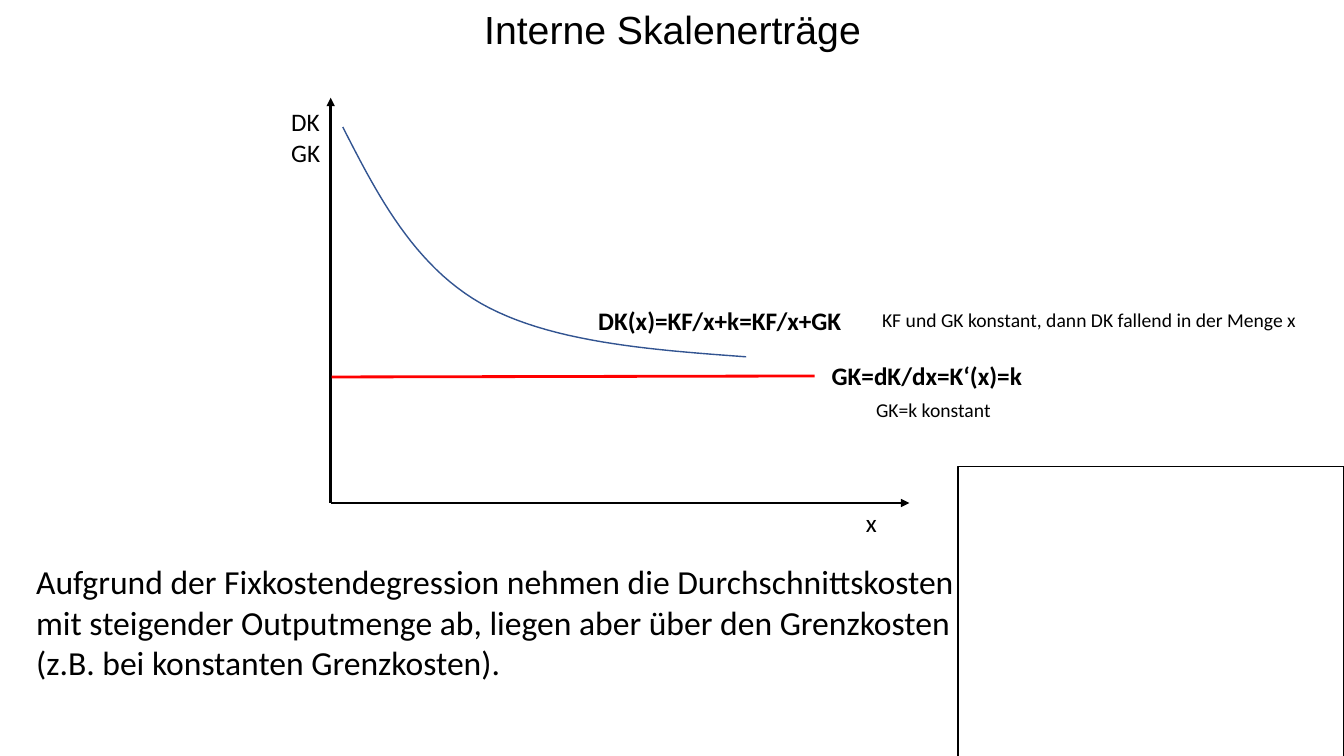
from dataclasses import dataclass

from lxml import etree
from pptx import Presentation
from pptx import util as u
from pptx.dml.color import RGBColor
from pptx.enum import shapes, text
from pptx.oxml import ns


@dataclass(frozen=True)
class Theme:
    ink: str = "000000"
    marginal: str = "FF0000"
    average: str = "325491"
    heading_font: str = "Arial"
    body_font: str = "Calibri"
    title: int = 28
    body: int = 24
    label: int = 18
    note: int = 14


class SlideBuilder:
    def __init__(self, slide, theme):
        self.slide = slide
        self.theme = theme

    def text(self, box, lines, size, font=None, bold=False, wrap=True,
             align=text.PP_ALIGN.LEFT, anchor=text.MSO_ANCHOR.TOP, spacing=1.0):
        frame = self.slide.shapes.add_textbox(*map(u.Inches, box)).text_frame
        frame.word_wrap = wrap
        frame.vertical_anchor = anchor
        for index, line in enumerate(lines):
            paragraph = frame.add_paragraph() if index else frame.paragraphs[0]
            paragraph.alignment = align
            paragraph.line_spacing = spacing
            run = paragraph.add_run()
            run.text = line
            run.font.name = font or self.theme.body_font
            run.font.size = u.Pt(size)
            run.font.bold = bold
            run.font.color.rgb = RGBColor.from_string(self.theme.ink)

    def stroke(self, line, color, width):
        line.color.rgb = RGBColor.from_string(color)
        line.width = u.Pt(width)

    def line(self, start, end, color, arrow=False):
        connector = self.slide.shapes.add_connector(
            shapes.MSO_CONNECTOR.STRAIGHT, *map(u.Inches, (*start, *end)))
        self.stroke(connector.line, color, 2)
        if arrow:
            etree.SubElement(connector.line._get_or_add_ln(),
                             ns.qn("a:tailEnd"), type="triangle")
        etree.SubElement(connector._element.spPr, ns.qn("a:effectLst"))

    def outline(self, shape, color):
        shape.shadow.inherit = False
        shape.fill.background()
        self.stroke(shape.line, color, 1)

    def curve(self, start, segments, color, steps=24):
        """Draw joined cubic Bézier segments as a fine open outline."""
        points = [start]
        for control_1, control_2, end in segments:
            anchors = (points[-1], control_1, control_2, end)
            for step in range(1, steps + 1):
                t = step / steps
                weights = ((1 - t) ** 3, 3 * t * (1 - t) ** 2,
                           3 * t ** 2 * (1 - t), t ** 3)
                points.append(tuple(sum(w * a[axis] for w, a in zip(weights, anchors))
                                    for axis in (0, 1)))
        emu = [(u.Inches(x), u.Inches(y)) for x, y in points]
        builder = self.slide.shapes.build_freeform(*emu[0])
        builder.add_line_segments(emu[1:], close=False)
        self.outline(builder.convert_to_shape(), color)

    def frame(self, box):
        self.outline(self.slide.shapes.add_shape(
            shapes.MSO_SHAPE.RECTANGLE, *map(u.Inches, box)), self.theme.ink)


def main():
    deck = Presentation()
    deck.slide_width, deck.slide_height = u.Inches(13.33), u.Inches(7.5)
    theme = Theme()
    page = SlideBuilder(deck.slides.add_slide(deck.slide_layouts[6]), theme)

    # Title and explanation
    page.text((1.67, -0.03, 10, 0.7), ["Interne Skalenerträge"], theme.title,
              font=theme.heading_font, align=text.PP_ALIGN.CENTER,
              anchor=text.MSO_ANCHOR.MIDDLE, spacing=0.9)
    page.text((0.26, 5.52, 9.35, 0.94),
              ["Aufgrund der Fixkostendegression nehmen die Durchschnittskosten "
               "mit steigender Outputmenge ab, liegen aber über den Grenzkosten "
               "(z.B. bei konstanten Grenzkosten)."], theme.body)

    # Axes
    origin = (3.28, 4.99)
    for axis_end in ((3.28, 0.97), (9.02, 4.99)):
        page.line(origin, axis_end, theme.ink, arrow=True)

    # Marginal and average cost
    page.line((3.29, 3.74), (8.08, 3.73), theme.marginal)
    page.curve((3.4, 1.26),
               [((3.75, 1.95), (4.11, 2.63), (4.77, 3.01)),
                ((5.44, 3.39), (6.42, 3.47), (7.4, 3.54))], theme.average)

    # Curve and axis labels
    page.text((5.82, 2.98, 2.64, 0.4), ["DK(x)=KF/x+k=KF/x+GK"], theme.label,
              bold=True, wrap=False, align=text.PP_ALIGN.CENTER)
    page.text((8.15, 3.53, 3.09, 0.4), ["GK=dK/dx=K‘(x)=k"], theme.label, bold=True)
    page.text((8.49, 4.98, 0.31, 0.4), ["x"], theme.label, wrap=False)
    page.text((2.79, 1.01, 0.49, 0.71), ["DK", "GK"], theme.label, wrap=False)

    # Assumptions
    page.text((8.65, 3.01, 4.32, 0.33),
              ["KF und GK konstant, dann DK fallend in der Menge x"], theme.note)
    page.text((8.59, 3.9, 1.49, 0.33), ["GK=k konstant"], theme.note)

    # Empty frame
    page.frame((9.5, 4.63, 3.83, 2.88))

    deck.save("out.pptx")


if __name__ == "__main__":
    main()
